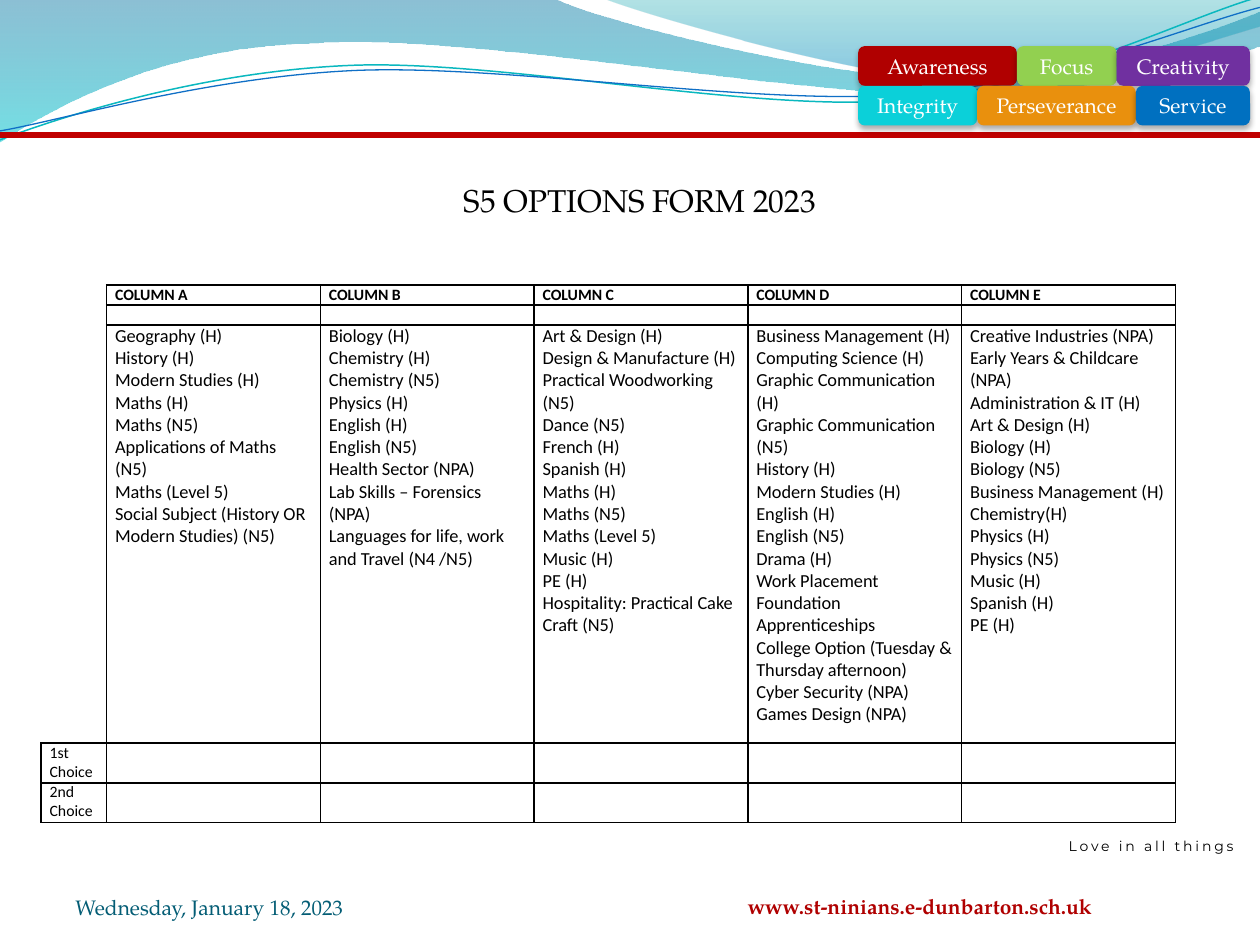
from dataclasses import dataclass

from lxml.etree import SubElement
from pptx import Presentation
from pptx.dml.color import RGBColor as Rgb
from pptx.enum.shapes import MSO_CONNECTOR as Connector, MSO_SHAPE as Shape
from pptx.enum.text import MSO_ANCHOR as Anchor, MSO_AUTO_SIZE as AutoSize, PP_ALIGN as Align
from pptx.oxml.ns import qn
from pptx.util import Cm, Pt


@dataclass(frozen=True)
class Theme:
    serif: str = "TeX Gyre Pagella"
    sans: str = "Calibri"
    motto: str = "Montserrat"
    black: str = "000000"
    white: str = "FFFFFF"
    rule: str = "C00000"
    address: str = "B00000"
    date: str = "045D75"
    title_size: float = 18
    label_size: float = 12
    subject_size: float = 10.5
    small_size: float = 9
    motto_size: float = 8


THEME = Theme()

# Content
TITLE = "S5 OPTIONS FORM 2023"
DATE = "Wednesday, January 18, 2023"
ADDRESS = "www.st-ninians.e-dunbarton.sch.uk"
MOTTO = "Love in all things"
VALUES = [  # rows of (label, width in cm, colour)
    [("Awareness", 3.2, "B00000"), ("Focus", 2.01, "92D050"), ("Creativity", 2.69, "7030A0")],
    [("Integrity", 2.4, "0BD0D9"), ("Perseverance", 3.2, "E9900D"), ("Service", 2.3, "0070C0")],
]
CHOICES = ["1st Choice", "2nd Choice"]
SUBJECTS = {
    "COLUMN A": ["Geography (H)", "History (H)", "Modern Studies (H)", "Maths (H)", "Maths (N5)",
                 "Applications of Maths (N5)", "Maths (Level 5)",
                 "Social Subject (History OR Modern Studies) (N5)"],
    "COLUMN B": ["Biology (H)", "Chemistry (H)", "Chemistry (N5)", "Physics (H)", "English (H)",
                 "English (N5)", "Health Sector (NPA)", "Lab Skills – Forensics (NPA)",
                 "Languages for life, work and Travel (N4 /N5)"],
    "COLUMN C": ["Art & Design (H)", "Design & Manufacture (H)", "Practical Woodworking (N5)",
                 "Dance (N5)", "French (H)", "Spanish (H)", "Maths (H)", "Maths (N5)",
                 "Maths (Level 5)", "Music (H)", "PE (H)",
                 "Hospitality: Practical Cake Craft (N5)"],
    "COLUMN D": ["Business Management (H)", "Computing Science (H)", "Graphic Communication (H)",
                 "Graphic Communication (N5)", "History (H)", "Modern Studies (H)", "English (H)",
                 "English (N5)", "Drama (H)", "Work Placement", "Foundation Apprenticeships",
                 "College Option (Tuesday & Thursday afternoon)", "Cyber Security (NPA)",
                 "Games Design (NPA)"],
    "COLUMN E": ["Creative Industries (NPA)", "Early Years & Childcare (NPA)",
                 "Administration & IT (H)", "Art & Design (H)", "Biology (H)", "Biology (N5)",
                 "Business Management (H)", "Chemistry(H)", "Physics (H)", "Physics (N5)",
                 "Music (H)", "Spanish (H)", "PE (H)"],
}

# Header waves in cm: a start point, then steps of one point (line) or three (Bezier curve)
BANDS = [  # (steps, gradient stops of (position, colour, opacity))
    ([[(0, 0)], [(11.18, -0.03)], [(12.09, 0.43), (16.87, 1.6), (19.25, 1.6)],
      [(21.67, 1.6), (24.33, 0.66), (25.4, 0.23)], [(25.43, 0.91)],
      [(24.97, 1.12), (22.1, 1.93), (18.95, 1.9)], [(15.8, 1.9), (9.7, 0.71), (6.53, 0.86)],
      [(3.28, 0.91), (1.17, 2.11), (-0.03, 2.87)]],
     [(0, "0074A1", 45), (1, "00C6CF", 55)]),
    ([[(12.17, -0.03)], [(12.93, 0.28), (17.32, 1.57), (19.53, 1.65)],
      [(21.74, 1.75), (24.41, 0.81), (25.4, 0.53)], [(25.4, 0)]],
     [(0, "00A1A9", 30), (0.8, "008BBF", 45)]),
]
STRANDS = [  # (steps, colour, width in points)
    ([[(0, 2.82)], [(1.22, 2.36), (4.01, 1.45), (7.04, 1.32)],
      [(10.03, 1.19), (15.06, 2.26), (18.11, 2.03)],
      [(21.16, 1.8), (23.83, 0.38), (25.35, -0.05)]], "0AB8BF", 0.85),
    ([[(0, 2.64)], [(1.19, 2.44), (4.17, 1.55), (7.19, 1.42)],
      [(10.24, 1.3), (15.16, 2.13), (18.21, 1.91)],
      [(21.23, 1.7), (23.9, 0.53), (25.4, 0.15)]], "0F6FC6", 0.75),
]


def add_run(paragraph, text, size, color=THEME.black, font=THEME.serif, bold=False):
    run = paragraph.add_run()
    run.text = text
    run.font.size, run.font.name, run.font.bold = Pt(size), font, bold
    run.font.color.rgb = Rgb.from_string(color)
    return run


def add_shadow(shape, color, opacity, blur, distance):
    effects = SubElement(shape._element.spPr, qn("a:effectLst"))
    outer = SubElement(effects, qn("a:outerShdw"), blurRad=str(Pt(blur)), dist=str(Pt(distance)),
                       dir="5400000", rotWithShape="0")
    tint = SubElement(outer, qn("a:srgbClr"), val=color)
    SubElement(tint, qn("a:alpha"), val=str(opacity * 1000))


def add_wave(slide, steps, close):
    """Build a freeform through all points, then bend each three-point step into a curve."""
    start, *rest = [(Cm(x), Cm(y)) for step in steps for x, y in step]
    builder = slide.shapes.build_freeform(*start)
    builder.add_line_segments(rest, close=False)
    if close:
        builder.add_line_segments([], close=True)
    shape = builder.convert_to_shape()
    segments = iter(list(shape._element.iter(qn("a:lnTo"))))
    for step in steps[1:]:
        first, *others = [next(segments) for _ in step]
        if others:
            first.tag = qn("a:cubicBezTo")
            for segment in others:
                first.append(segment[0])
                segment.getparent().remove(segment)
    shape.shadow.inherit = False
    return shape


def add_label(slide, left, top, width, height, anchor=Anchor.TOP, align=Align.LEFT):
    frame = slide.shapes.add_textbox(Cm(left), Cm(top), Cm(width), Cm(height)).text_frame
    frame.word_wrap, frame.vertical_anchor = True, anchor
    frame.paragraphs[0].alignment = align
    return frame


def set_cell(cell, lines, size, sides, bold=False):
    cell.margin_left = cell.margin_right = Cm(0.17)
    cell.margin_top = cell.margin_bottom = 0
    frame = cell.text_frame
    for index, line in enumerate(lines):
        paragraph = frame.add_paragraph() if index else frame.paragraphs[0]
        add_run(paragraph, line, size, font=THEME.sans, bold=bold)
    if not lines:
        SubElement(frame.paragraphs[0]._p, qn("a:endParaRPr"), sz=str(THEME.small_size * 100))
    for side in "LRTB":
        border = SubElement(cell._tc.get_or_add_tcPr(), qn(f"a:ln{side}"), w=str(Pt(1)))
        if side in sides:
            fill = SubElement(border, qn("a:solidFill"))
            SubElement(fill, qn("a:srgbClr"), val=THEME.black)
        else:
            SubElement(border, qn("a:noFill"))
    cell.fill.background()


presentation = Presentation()
presentation.slide_width, presentation.slide_height = Cm(25.4), Cm(19.05)
slide = presentation.slides.add_slide(presentation.slide_layouts[5])

# Header waves
for steps, stops in BANDS:
    band = add_wave(slide, steps, close=True)
    band.line.fill.background()
    band.fill.gradient()
    band.fill.gradient_angle = 270
    for stop, (position, color, opacity) in zip(band.fill.gradient_stops, stops):
        stop.position, stop.color.rgb = position, Rgb.from_string(color)
        tint = stop._gs.find(qn("a:srgbClr"))
        SubElement(tint, qn("a:alpha"), val=str(opacity * 1000))
for steps, color, width in STRANDS:
    strand = add_wave(slide, steps, close=False)
    strand.fill.background()
    strand.line.color.rgb, strand.line.width = Rgb.from_string(color), Pt(width)

# Red rule
rule = slide.shapes.add_connector(Connector.STRAIGHT, 0, Cm(2.72), Cm(25.4), Cm(2.72))
rule.line.color.rgb, rule.line.width = Rgb.from_string(THEME.rule), Pt(3)
SubElement(rule._element.spPr, qn("a:effectLst"))

# School values
for row, values in enumerate(VALUES):
    left = 17.3
    for name, width, color in values:
        tile = slide.shapes.add_shape(Shape.ROUNDED_RECTANGLE, Cm(left), Cm(0.93 + 0.8 * row),
                                      Cm(width), Cm(0.8))
        tile.fill.solid()
        tile.fill.fore_color.rgb = Rgb.from_string(color)
        tile.line.fill.background()
        add_shadow(tile, THEME.black, 32, 3.5, 2.2)
        tile.text_frame.vertical_anchor = Anchor.MIDDLE
        tile.text_frame.paragraphs[0].alignment = Align.CENTER
        add_run(tile.text_frame.paragraphs[0], name, THEME.label_size, THEME.white)
        left += width

# Title
title = slide.shapes.title
title.left, title.top, title.width, title.height = Cm(2.7), Cm(3.51), Cm(20.4), Cm(1.02)
title.text_frame.auto_size = AutoSize.NONE
title.text_frame.vertical_anchor = Anchor.MIDDLE
title.text_frame.paragraphs[0].alignment = Align.CENTER
add_run(title.text_frame.paragraphs[0], TITLE, THEME.title_size)

# Footer
address = add_label(slide, 12.7, 17.5, 9.32, 1.02, Anchor.BOTTOM, Align.RIGHT)
address.margin_left = address.margin_right = address.margin_top = address.margin_bottom = 0
add_run(address.paragraphs[0], ADDRESS, THEME.label_size, THEME.address, bold=True)
motto = add_label(slide, 21.03, 16.76, 4.36, 1.88, align=Align.CENTER)
motto_run = add_run(motto.paragraphs[0], MOTTO, THEME.motto_size, font=THEME.motto)
motto_run.font._element.set("spc", "160")
date = add_label(slide, 1.27, 17.65, 5.92, 1.02, Anchor.BOTTOM)
add_run(date.paragraphs[0], DATE, THEME.label_size, THEME.date)

# Options table: headings, a spacer row, subjects, then the choices to fill in
widths = [1.32] + [4.31] * len(SUBJECTS)
heights = [0.4, 0.4, 8.43] + [0.8] * len(CHOICES)
table = slide.shapes.add_table(len(heights), len(widths), Cm(0.83), Cm(5.75),
                               Cm(sum(widths)), Cm(sum(heights))).table
table.first_row = table.horz_banding = False
for column, width in zip(table.columns, widths):
    column.width = Cm(width)
for row, height in zip(table.rows, heights):
    row.height = Cm(height)
side_labels = [[], [], []] + [[choice] for choice in CHOICES]
for row, label in enumerate(side_labels):
    sides = "LRTB" if label else "RB" if row == 2 else "R"
    set_cell(table.cell(row, 0), label, THEME.small_size, sides)
for column, (heading, subjects) in enumerate(SUBJECTS.items(), start=1):
    for row, lines in enumerate([[heading], [], subjects] + [[] for _ in CHOICES]):
        size = THEME.subject_size if row == 2 else THEME.small_size
        set_cell(table.cell(row, column), lines, size, "LRTB", bold=row == 0)

presentation.save("out.pptx")
